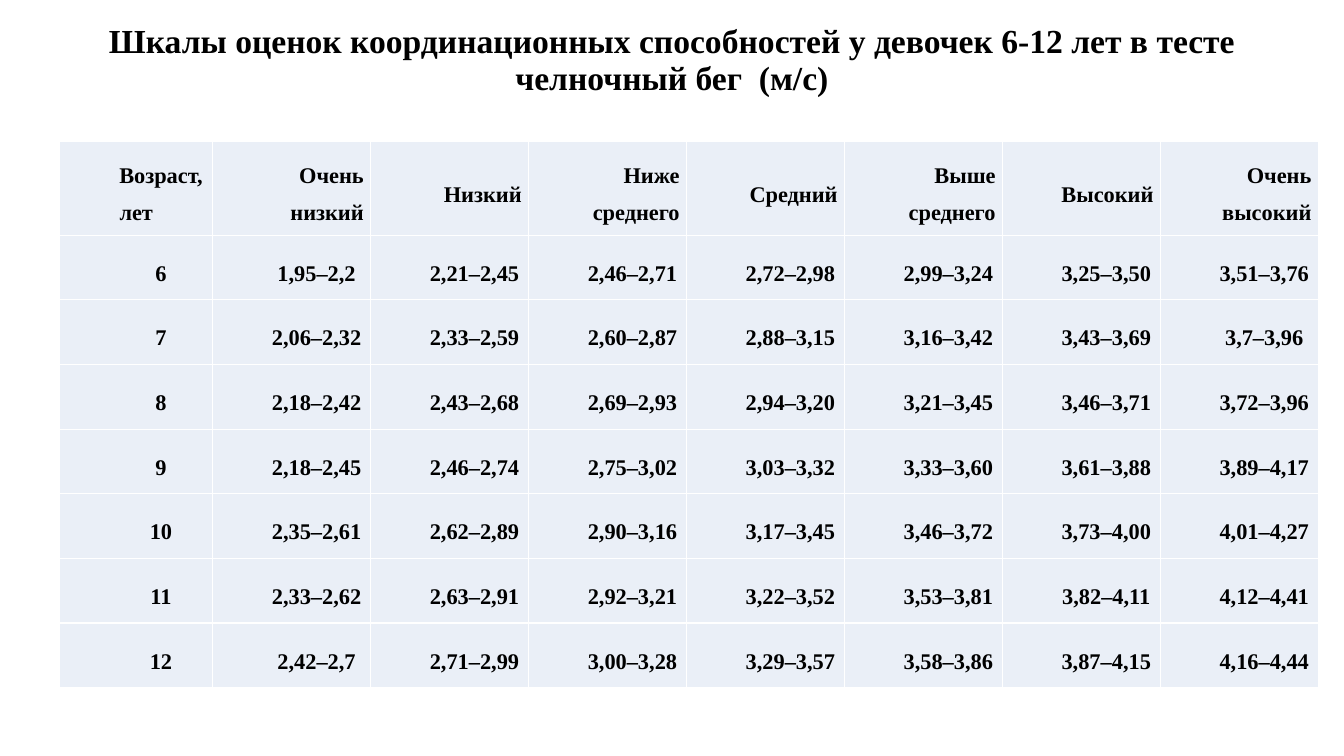
"""Build a slide with a table of shuttle-run grading scales for girls aged 6-12."""
from dataclasses import dataclass
from typing import Any

from lxml import etree
from pptx import Presentation
from pptx.dml.color import RGBColor
from pptx.enum.text import MSO_ANCHOR, MSO_AUTO_SIZE, PP_ALIGN
from pptx.oxml.ns import qn
from pptx.util import Pt

CENTER, RIGHT = PP_ALIGN.CENTER, PP_ALIGN.RIGHT
MIDDLE = MSO_ANCHOR.MIDDLE
NO_AUTOFIT = MSO_AUTO_SIZE.NONE

COLORS = {"text": "000000", "cell": "EAEFF7", "border": "FFFFFF"}
FONT = "Times New Roman"
TITLE = ("Шкалы оценок координационных способностей у девочек 6-12 лет "
         "в тесте челночный бег  (м/с)")
HEADERS = ["Возраст, лет", "Очень низкий", "Низкий", "Ниже среднего",
           "Средний", "Выше среднего", "Высокий", "Очень высокий"]
SCALES = {
    6: "1,95‒2,2 2,21‒2,45 2,46‒2,71 2,72‒2,98 2,99‒3,24 3,25‒3,50 3,51‒3,76",
    7: "2,06‒2,32 2,33‒2,59 2,60‒2,87 2,88‒3,15 3,16‒3,42 3,43‒3,69 3,7‒3,96",
    8: "2,18‒2,42 2,43‒2,68 2,69‒2,93 2,94‒3,20 3,21‒3,45 3,46‒3,71 3,72‒3,96",
    9: "2,18‒2,45 2,46‒2,74 2,75‒3,02 3,03‒3,32 3,33‒3,60 3,61‒3,88 3,89‒4,17",
    10: "2,35‒2,61 2,62‒2,89 2,90‒3,16 3,17‒3,45 3,46‒3,72 3,73‒4,00 4,01‒4,27",
    11: "2,33‒2,62 2,63‒2,91 2,92‒3,21 3,22‒3,52 3,53‒3,81 3,82‒4,11 4,12‒4,41",
    12: "2,42‒2,7 2,71‒2,99 3,00‒3,28 3,29‒3,57 3,58‒3,86 3,87‒4,15 4,16‒4,44",
}
TITLE_BOX = {"left": Pt(66), "top": Pt(28.8), "width": Pt(828), "height": Pt(60)}
TITLE_FRAME = {"word_wrap": True, "auto_size": NO_AUTOFIT,
               "vertical_anchor": MIDDLE, "margin_bottom": Pt(34)}
TABLE_BOX = {"left": Pt(42.6), "top": Pt(101), "width": Pt(899.3), "height": Pt(390.3)}
AGE_WIDTH, SCALE_WIDTH = Pt(109.4), Pt(112.84)
HEADER_HEIGHT, ROW_HEIGHT = Pt(67), Pt(46.18)
CELL_FORMAT = {"vertical_anchor": MIDDLE, "margin_left": Pt(5), "margin_right": Pt(5),
               "margin_top": 0, "margin_bottom": 0}
INDENT = Pt(35.4)


@dataclass
class CellSpec:
    """Text and alignment of one table cell."""

    text: str
    align: PP_ALIGN = CENTER


def apply(target: Any, values: dict[str, Any]) -> None:
    """Set every attribute listed in values on the target."""
    for name, value in values.items():
        setattr(target, name, value)


def write(tf: Any, text: str, size: float, align: PP_ALIGN, spacing: float) -> Any:
    """Fill a text frame with one bold paragraph and return it."""
    p = tf.paragraphs[0]
    apply(p, {"alignment": align, "line_spacing": spacing})
    r = p.add_run()
    r.text = text
    apply(r.font, {"name": FONT, "size": Pt(size), "bold": True})
    r.font.color.rgb = RGBColor.from_string(COLORS["text"])
    return p


def add_borders(cell: Any) -> None:
    """Draw a one-point border on each side of a cell."""
    tc_pr = cell._tc.get_or_add_tcPr()
    for i, side in enumerate(("lnL", "lnR", "lnT", "lnB")):
        ln = etree.Element(qn(f"a:{side}"), w=str(Pt(1)))
        fill = etree.SubElement(ln, qn("a:solidFill"))
        etree.SubElement(fill, qn("a:srgbClr"), val=COLORS["border"])
        tc_pr.insert(i, ln)


def draw_cell(cell: Any, spec: CellSpec) -> None:
    """Format one table cell and write its text."""
    apply(cell, CELL_FORMAT)
    cell.fill.solid()
    cell.fill.fore_color.rgb = RGBColor.from_string(COLORS["cell"])
    add_borders(cell)
    p = write(cell.text_frame, spec.text, 16, spec.align, 1.5)
    p._p.get_or_add_pPr().set("indent", str(INDENT))


def draw_title(s: Any) -> None:
    """Place and fill the title placeholder."""
    sp = s.shapes.title
    apply(sp, TITLE_BOX)
    apply(sp.text_frame, TITLE_FRAME)
    write(sp.text_frame, TITLE, 24, CENTER, 0.9)


def draw_table(s: Any, grid: list[list[CellSpec]]) -> None:
    """Add the table of grading scales."""
    table = s.shapes.add_table(len(grid), len(grid[0]), **TABLE_BOX).table
    apply(table, {"first_row": False, "horz_banding": False})
    for i, column in enumerate(table.columns):
        column.width = SCALE_WIDTH if i else AGE_WIDTH
    for i, row in enumerate(table.rows):
        row.height = ROW_HEIGHT if i else HEADER_HEIGHT
        for cell, spec in zip(row.cells, grid[i]):
            draw_cell(cell, spec)


def main() -> None:
    """Build and save the presentation."""
    prs = Presentation()
    apply(prs, {"slide_width": Pt(960), "slide_height": Pt(540)})
    s = prs.slides.add_slide(prs.slide_layouts.get_by_name("Title Only"))
    draw_title(s)
    header = [CellSpec(text, RIGHT if i else CENTER) for i, text in enumerate(HEADERS)]
    body = [[CellSpec(text) for text in (str(age), *scale.split())]
            for age, scale in SCALES.items()]
    draw_table(s, [header, *body])
    prs.save("out.pptx")


if __name__ == "__main__":
    main()
